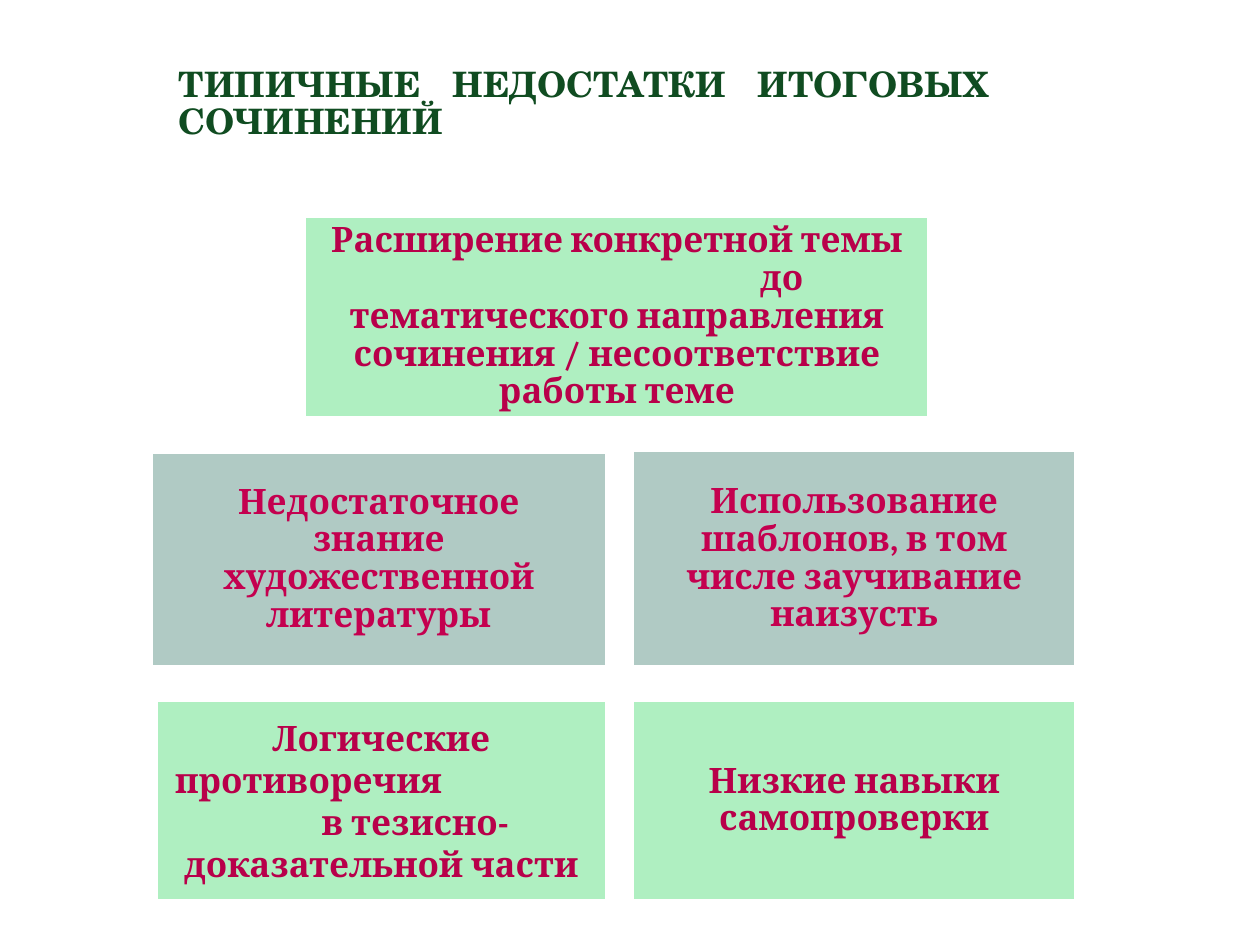
"""Build the slide on typical shortcomings of final essays."""
from dataclasses import dataclass

import lxml.etree
import pptx
import pptx.dml.color
import pptx.enum.shapes
import pptx.enum.text
import pptx.oxml.ns
import pptx.util
from pptx.util import Cm


@dataclass(frozen=True)
class Theme:
    title_color: str = "104C21"
    mint: str = "AFEFC1"
    sage: str = "B0CAC4"
    on_mint: str = "B8004A"
    on_sage: str = "C4004F"
    border: str = "FFFFFF"
    title_font: str = "TeX Gyre Schola"
    body_font: str = "Cambria"
    text_size: int = 20
    border_width: float = 4.5


theme = Theme()
align = pptx.enum.text.PP_ALIGN


def color(value):
    return pptx.dml.color.RGBColor.from_string(value)


def write(paragraph, text, *, font, fill, alignment, spacing=0.9, indent=0, tabs=()):
    properties = paragraph._p.get_or_add_pPr()
    if indent:
        properties.set("indent", str(Cm(indent)))
    if tabs:
        tab_list = lxml.etree.SubElement(properties, pptx.oxml.ns.qn("a:tabLst"))
        for position in tabs:
            lxml.etree.SubElement(tab_list, pptx.oxml.ns.qn("a:tab"), pos=str(Cm(position)), algn="l")
    paragraph.alignment = alignment
    paragraph.line_spacing = spacing
    run = paragraph.add_run()
    run.text = text
    run.font.name = font
    run.font.size = pptx.util.Pt(theme.text_size)
    run.font.bold = True
    run.font.color.rgb = color(fill)


presentation = pptx.Presentation()
presentation.slide_width = Cm(25.4)
presentation.slide_height = Cm(19.05)
slide = presentation.slides.add_slide(presentation.slide_layouts[5])

title = slide.shapes.title
title.left, title.top, title.width, title.height = Cm(3.35), Cm(1.12), Cm(22.02), Cm(1.98)
title.text_frame.word_wrap = True
title.text_frame.auto_size = pptx.enum.text.MSO_AUTO_SIZE.NONE
title.text_frame.vertical_anchor = pptx.enum.text.MSO_ANCHOR.MIDDLE
write(title.text_frame.paragraphs[0], "ТИПИЧНЫЕ\tНЕДОСТАТКИ\tИТОГОВЫХ СОЧИНЕНИЙ",
      font=theme.title_font, fill=theme.title_color, alignment=align.LEFT, tabs=(5.52, 11.67))

mint = (theme.mint, theme.on_mint)
sage = (theme.sage, theme.on_sage)
cards = [
    ((6.1, 4.32, 12.67, 4.14), mint, 0.9, [
        ("Расширение конкретной темы", align.CENTER, 0),
        ("до тематического направления сочинения / несоответствие работы теме", align.CENTER, 6.65),
    ]),
    ((3, 9.07, 9.27, 4.42), sage, 0.9, [
        ("Недостаточное знание художественной литературы", align.CENTER, 0),
    ]),
    ((12.7, 9.04, 9.04, 4.45), sage, 0.9, [
        ("Использование шаблонов, в том числе заучивание наизусть", align.CENTER, 0),
    ]),
    ((3.1, 14.07, 9.17, 4.14), mint, 1.0, [
        ("Логические", align.CENTER, 0),
        ("противоречия", align.LEFT, 0),
        ("в тезисно-доказательной части", align.CENTER, 1.37),
    ]),
    ((12.7, 14.07, 9.04, 4.14), mint, 0.9, [
        ("Низкие навыки самопроверки", align.CENTER, 0),
    ]),
]

for box, (background, foreground), spacing, lines in cards:
    card = slide.shapes.add_shape(pptx.enum.shapes.MSO_SHAPE.RECTANGLE, *map(Cm, box))
    card.shadow.inherit = False
    card.fill.solid()
    card.fill.fore_color.rgb = color(background)
    card.line.color.rgb = color(theme.border)
    card.line.width = pptx.util.Pt(theme.border_width)
    frame = card.text_frame
    frame.word_wrap = True
    frame.vertical_anchor = pptx.enum.text.MSO_ANCHOR.MIDDLE
    frame.margin_left = frame.margin_right = frame.margin_top = frame.margin_bottom = Cm(0.43)
    for index, (text, alignment, indent) in enumerate(lines):
        paragraph = frame.add_paragraph() if index else frame.paragraphs[0]
        write(paragraph, text, font=theme.body_font, fill=foreground,
              alignment=alignment, spacing=spacing, indent=indent)

presentation.save("out.pptx")
